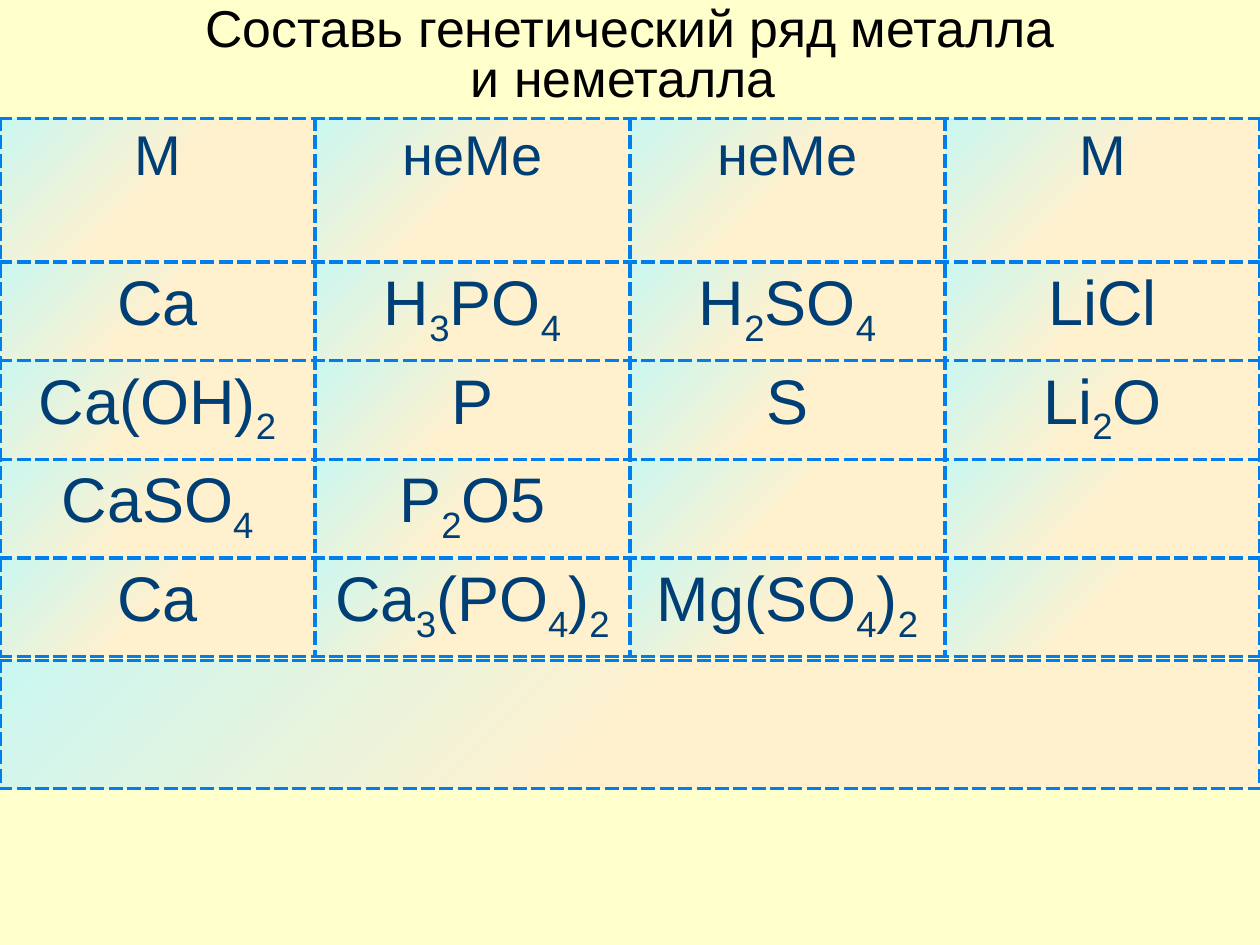
"""Builds a slide with a table of genetic series of metals and non-metals."""
from lxml import etree
from pptx import Presentation
from pptx import util as u
from pptx.dml.color import RGBColor
from pptx.enum import text
from pptx.oxml import ns

CREAM = RGBColor(0xFF, 0xFF, 0xCC)
BLACK = RGBColor(0, 0, 0)
NAVY = RGBColor(0x00, 0x3F, 0x75)
BLUE = RGBColor(0x00, 0x7E, 0xEB)
MINT = RGBColor(0xCA, 0xF7, 0xF1)
PEACH = RGBColor(0xFF, 0xF1, 0xCE)

HEADS = ["М", "неМе", "неМе", "М"]
ROWS = [
    ["Ca", "H_3PO_4", "H_2SO_4", "LiCl"],
    ["Ca(OH)_2", "P", "S", "Li_2O"],
    ["CaSO_4", "P_2O5", "", ""],
    ["Ca", "Ca_3(PO_4)_2", "Mg(SO_4)_2", ""],
]


class Deck:
    """Holds the style and the current slide."""

    font = "Arial"
    edge = u.Pt(2.25)
    stops = [(0, MINT), (50, PEACH), (100, PEACH)]

    def __init__(self, slide):
        self.slide = slide

    def back(self, color):
        fill = self.slide.background.fill
        fill.solid()
        fill.fore_color.rgb = color

    def run(self, para, words, size, color, base=0):
        run = para.add_run()
        run.text = words
        run.font.name, run.font.size = self.font, u.Pt(size)
        run.font.color.rgb = color
        if base:
            run.font._element.set("baseline", str(base * 1000))

    def title(self, words, left, top, width, height):
        box = self.slide.shapes.add_textbox(*map(u.Inches, (left, top, width, height)))
        frame = box.text_frame
        frame.word_wrap = True
        frame.vertical_anchor = text.MSO_ANCHOR.MIDDLE
        para = frame.paragraphs[0]
        para.alignment = text.PP_ALIGN.CENTER
        para.line_spacing = 0.8
        self.run(para, words, 29.6, BLACK)

    def node(self, parent, tag, **attrs):
        return etree.SubElement(parent, ns.qn("a:" + tag), attrs)

    def tint(self, parent, color):
        self.node(parent, "srgbClr", val=str(color))

    def dress(self, cell):
        props = cell._tc.get_or_add_tcPr()
        for side in "LRTB":
            line = self.node(props, "ln" + side, w=str(self.edge))
            self.tint(self.node(line, "solidFill"), BLUE)
            self.node(line, "prstDash", val="lgDash")
        grad = self.node(props, "gradFill", rotWithShape="1")
        stops = self.node(grad, "gsLst")
        for pos, color in self.stops:
            self.tint(self.node(stops, "gs", pos=str(pos * 1000)), color)
        self.node(grad, "lin", ang=str(45 * 60000), scaled="1")

    def label(self, cell, words, size):
        para = cell.text_frame.paragraphs[0]
        para.alignment = text.PP_ALIGN.CENTER
        first, *rest = words.split("_")
        if first:
            self.run(para, first, size, NAVY)
        for part in rest:
            self.run(para, part[0], size, NAVY, -25)
            if part[1:]:
                self.run(para, part[1:], size, NAVY)

    def table(self, top, rows, highs, sizes):
        wide = u.Inches(10)
        grid = self.slide.shapes.add_table(
            len(rows), len(rows[0]), 0, u.Inches(top), wide, u.Inches(sum(highs))
        ).table
        grid.first_row = grid.horz_banding = False
        for r, (row, high, size) in enumerate(zip(rows, highs, sizes)):
            grid.rows[r].height = u.Inches(high)
            for c, words in enumerate(row):
                cell = grid.cell(r, c)
                self.dress(cell)
                self.label(cell, words, size)


def main():
    prs = Presentation()
    prs.slide_width, prs.slide_height = u.Inches(10), u.Inches(7.5)
    deck = Deck(prs.slides.add_slide(prs.slide_layouts[6]))
    deck.back(CREAM)
    deck.title("Составь генетический ряд металла и неметалла ", 1.46, 0, 7.09, 0.91)
    count = len(ROWS)
    deck.table(0.94, [HEADS] + ROWS, [1.14] + [0.74] * count, [32] + [36] * count)
    deck.table(5.24, [[""]], [1.02], [36])
    prs.save("out.pptx")


if __name__ == "__main__":
    main()
